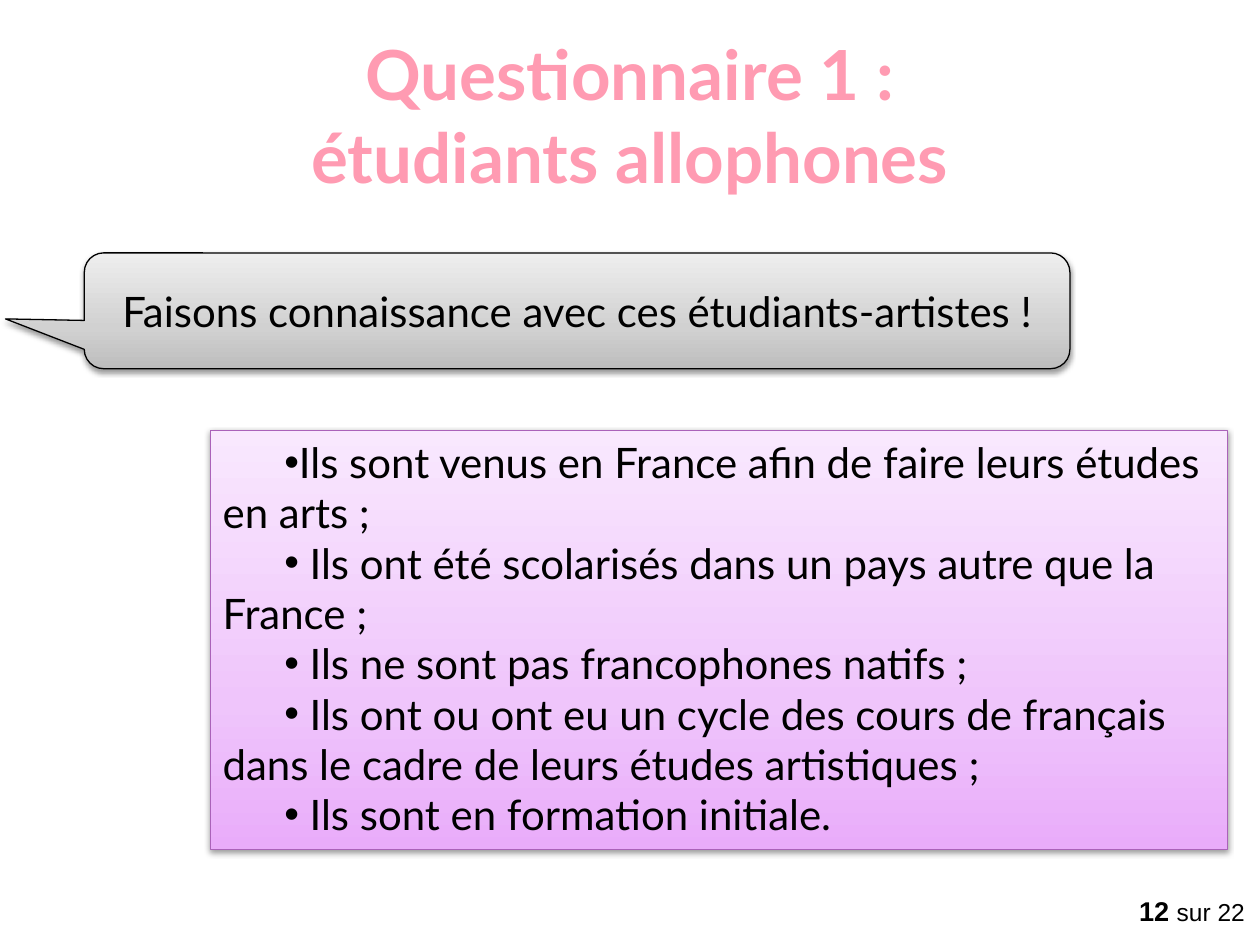
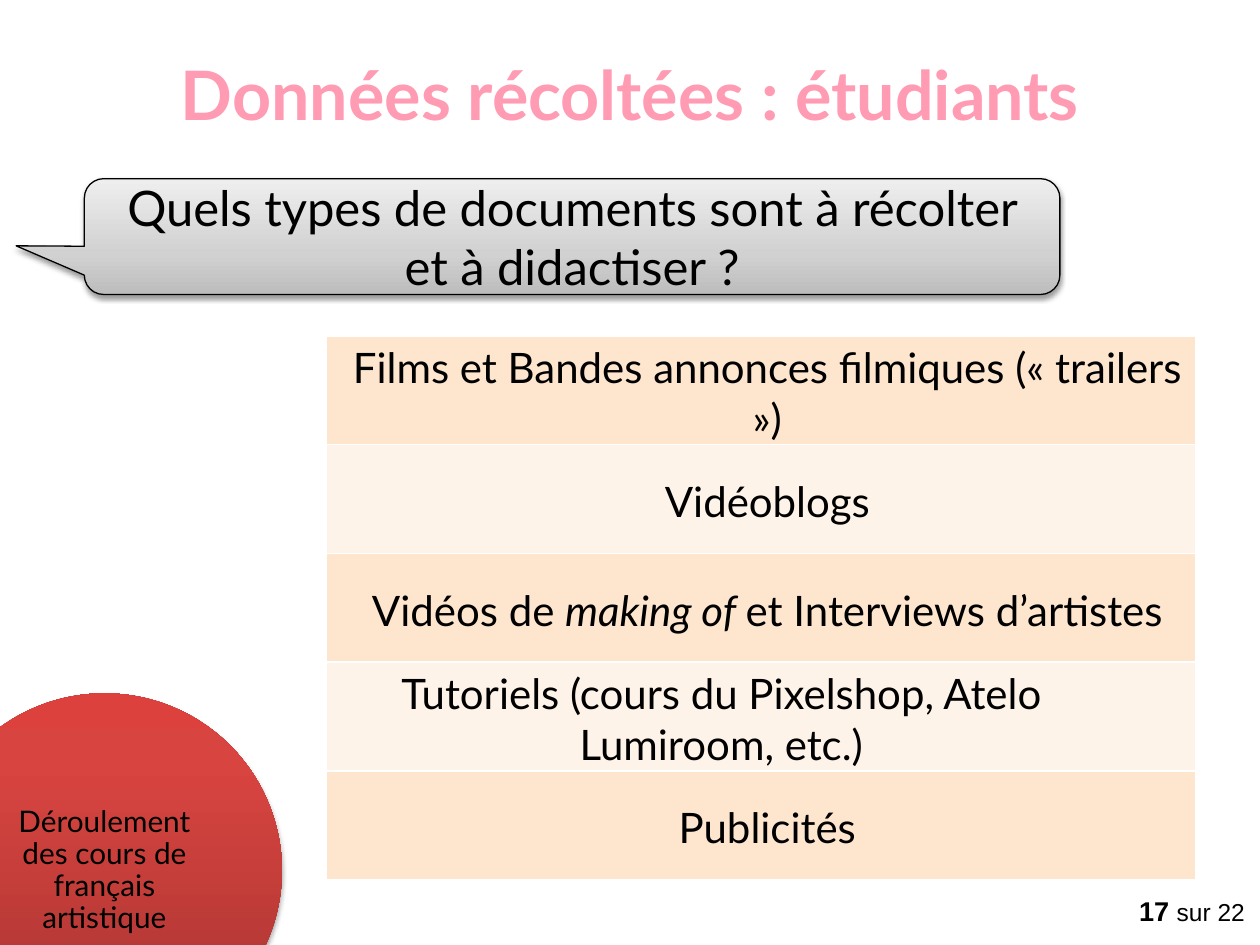
"""Build two slides about the student questionnaire."""
from copy import deepcopy
from dataclasses import dataclass

from lxml import etree
from pptx import Presentation
from pptx.dml.color import RGBColor
from pptx.enum.shapes import MSO_SHAPE
from pptx.enum.text import MSO_ANCHOR, MSO_AUTO_SIZE, PP_ALIGN
from pptx.oxml.ns import qn
from pptx.util import Inches, Pt

CENTER, LEFT = PP_ALIGN.CENTER, PP_ALIGN.LEFT
TOP, MIDDLE = MSO_ANCHOR.TOP, MSO_ANCHOR.MIDDLE
NO_AUTOFIT = MSO_AUTO_SIZE.NONE
RECTANGLE, OVAL = MSO_SHAPE.RECTANGLE, MSO_SHAPE.OVAL
CALLOUT = MSO_SHAPE.ROUNDED_RECTANGULAR_CALLOUT
TITLE_ONLY = 5


@dataclass(frozen=True)
class Theme:
    """Colours, fonts and type sizes shared by the slides."""
    font: str = "Lato"
    footer_font: str = "Arial"
    text: str = "000000"
    title: str = "FF9BB2"
    border: str = "FFFFFF"
    panel_line: str = "AA62B9"
    panel: tuple = ((0, "E9ACFA"), (0.35, "EFC5FB"), (1, "F9E8FE"))
    callout: tuple = ((0, "BDBDBD"), (0.35, "D1D1D1"), (1, "EEEEEE"))
    circle: tuple = ((0, "A73431"), (0.8, "D84440"), (1, "DC413D"))
    bands: tuple = ("FDE5CE", "FEF3E8")
    body_size: float = 24
    question_size: float = 28
    circle_size: float = 17
    number_size: float = 15.5
    total_size: float = 14


THEME = Theme()
SLIDE_WIDTH, SLIDE_HEIGHT = 10.01, 7.51
CALLOUT_LEFT, CALLOUT_HEIGHT = 0.67, 0.92
TOTAL = "22"

STUDENTS = {
    "title": ["Questionnaire 1 :", "étudiants allophones"],
    "title_area": (0, 0.24, SLIDE_WIDTH, 1.31),
    "title_size": 39.5,
    "callout": "Faisons connaissance avec ces étudiants-artistes !",
    "callout_top": 2.01,
    "callout_width": 7.83,
    "callout_tail": (-0.58, 0.07),
    "callout_size": THEME.body_size,
    "number": "12",
}
PROFILE = [
    "Ils sont venus en France afin de faire leurs études en arts ;",
    " Ils ont été scolarisés dans un pays autre que la France ;",
    " Ils ne sont pas francophones natifs ;",
    " Ils ont ou ont eu un cycle des cours de français dans le cadre de leurs études artistiques ;",
    " Ils sont en formation initiale.",
]
DOCUMENTS = {
    "title": ["Données récoltées : étudiants"],
    "title_area": (0, 0.41, SLIDE_WIDTH, 0.67),
    "title_size": 39,
    "callout": "Quels types de documents sont à récolter et à didactiser ?",
    "callout_top": 1.42,
    "callout_width": 7.75,
    "callout_tail": (-0.57, 0.08),
    "callout_size": THEME.question_size,
    "number": "17",
}
DOCUMENT_ROWS = [
    {"spans": [("Films et Bandes annonces filmiques (« trailers »)", False)]},
    {"spans": [("Vidéoblogs", False)]},
    {"spans": [("Vidéos de ", False), ("making of ", True),
               ("et Interviews d’artistes", False)]},
    {"spans": [("Tutoriels (cours du Pixelshop, Atelo Lumiroom, etc.)", False)],
     "right": 0.73},
    {"spans": [("Publicités", False)]},
]
COURSE = "Déroulement des cours de français artistique"


def color(value):
    """Return a colour from its hexadecimal form."""
    return RGBColor.from_string(value)


def inches(*values):
    """Convert several lengths to inches."""
    return [Inches(value) for value in values]


def add_span(para, text, size, bold=False, italic=False,
             font=THEME.font, tint=THEME.text):
    """Add one formatted run to a paragraph."""
    span = para.add_run()
    span.text = text
    span.font.name, span.font.size = font, Pt(size)
    span.font.bold, span.font.italic = bold, italic
    span.font.color.rgb = color(tint)


def set_frame(frame, anchor, margins=(0.1, 0.05, 0.1, 0.05)):
    """Set wrapping, anchor and margins of a text frame."""
    frame.auto_size = NO_AUTOFIT
    frame.word_wrap = True
    frame.vertical_anchor = anchor
    (frame.margin_left, frame.margin_top,
     frame.margin_right, frame.margin_bottom) = inches(*margins)


def add_shadow(shape, opacity, distance):
    """Give a shape a soft shadow falling downwards."""
    shape.shadow.inherit = False
    effects = shape._element.spPr.find(qn("a:effectLst"))
    shadow = etree.SubElement(
        effects, qn("a:outerShdw"), blurRad=str(Pt(3.1)), dist=str(Pt(distance)),
        dir="5400000", rotWithShape="0")
    tint = etree.SubElement(shadow, qn("a:srgbClr"), val="000000")
    etree.SubElement(tint, qn("a:alpha"), val=str(opacity * 1000))


def add_gradient_shape(page, kind, area, stops, line=None, opacity=38, distance=1.6):
    """Add a preset shape with a vertical gradient and a shadow."""
    shape = page.shapes.add_shape(kind, *inches(*area))
    shape.fill.gradient()
    stop_list = shape._element.spPr.find(qn("a:gradFill")).find(qn("a:gsLst"))
    stop_list.append(deepcopy(stop_list[-1]))
    for stop, (position, tint) in zip(shape.fill.gradient_stops, stops):
        stop.position = position
        stop.color.rgb = color(tint)
    shape.fill.gradient_angle = 90
    if line:
        shape.line.color.rgb = color(line)
        shape.line.width = Pt(0.75)
    else:
        shape.line.fill.background()
    add_shadow(shape, opacity, distance)
    return shape


def add_title(page, content):
    """Place and fill the title placeholder."""
    title = page.shapes.title
    title.left, title.top, title.width, title.height = inches(*content["title_area"])
    set_frame(title.text_frame, TOP, (0, 0.01, 0, 0))
    para = title.text_frame.paragraphs[0]
    para.alignment = CENTER
    for index, line in enumerate(content["title"]):
        if index:
            para.add_line_break()
        add_span(para, line, content["title_size"], bold=True, tint=THEME.title)


def add_callout(page, content):
    """Add the speech bubble under the title."""
    area = (CALLOUT_LEFT, content["callout_top"], content["callout_width"], CALLOUT_HEIGHT)
    bubble = add_gradient_shape(page, CALLOUT, area, THEME.callout, THEME.text)
    for index, value in enumerate(content["callout_tail"]):
        bubble.adjustments[index] = value
    set_frame(bubble.text_frame, MIDDLE)
    para = bubble.text_frame.paragraphs[0]
    para.alignment = CENTER
    add_span(para, content["callout"], content["callout_size"])


def add_footer(page, number):
    """Add the page count at the bottom right."""
    box = page.shapes.add_textbox(*inches(9.01, 7.11, 0.96, 0.26))
    set_frame(box.text_frame, TOP, (0.04, 0, 0, 0))
    para = box.text_frame.paragraphs[0]
    add_span(para, number + " ", THEME.number_size, bold=True, font=THEME.footer_font)
    add_span(para, "sur " + TOTAL, THEME.total_size, font=THEME.footer_font)


def add_page(deck, content):
    """Add a slide with its title, bubble and footer."""
    page = deck.slides.add_slide(deck.slide_layouts[TITLE_ONLY])
    add_title(page, content)
    add_callout(page, content)
    add_footer(page, content["number"])
    return page


def add_profile(page):
    """Add the panel with the bulleted profile."""
    panel = add_gradient_shape(page, RECTANGLE, (1.67, 3.42, 8.08, 3.33),
                               THEME.panel, THEME.panel_line)
    frame = panel.text_frame
    set_frame(frame, TOP)
    for index, text in enumerate(PROFILE):
        para = frame.add_paragraph() if index else frame.paragraphs[0]
        para.alignment = LEFT
        properties = para._p.get_or_add_pPr()
        properties.set("marL", "0")
        properties.set("indent", str(Inches(0.49)))
        etree.SubElement(properties, qn("a:buFont"), typeface=THEME.footer_font)
        etree.SubElement(properties, qn("a:buChar"), char="•")
        add_span(para, text, THEME.body_size)


def set_borders(cell):
    """Draw the four borders of a table cell."""
    properties = cell._tc.get_or_add_tcPr()
    for side in ("a:lnL", "a:lnR", "a:lnT", "a:lnB"):
        line = etree.SubElement(properties, qn(side), w=str(Pt(1)))
        fill = etree.SubElement(line, qn("a:solidFill"))
        etree.SubElement(fill, qn("a:srgbClr"), val=THEME.border)


def add_documents(page):
    """Add the table of document types."""
    frame = page.shapes.add_table(len(DOCUMENT_ROWS), 1, *inches(2.59, 2.67, 6.91, 4.32))
    table = frame.table
    table.first_row = table.horz_banding = False
    for index, row in enumerate(DOCUMENT_ROWS):
        cell = table.cell(index, 0)
        set_borders(cell)
        cell.fill.solid()
        cell.fill.fore_color.rgb = color(THEME.bands[index % len(THEME.bands)])
        cell.vertical_anchor = MIDDLE
        (cell.margin_left, cell.margin_top, cell.margin_right,
         cell.margin_bottom) = inches(0.1, 0.04, row.get("right", 0), 0)
        para = cell.text_frame.paragraphs[0]
        para.alignment = CENTER
        for text, italic in row["spans"]:
            add_span(para, text, THEME.body_size, italic=italic)


def add_course_circle(page):
    """Add the circle that names the topic in the corner."""
    circle = add_gradient_shape(page, OVAL, (-0.58, 5.51, 2.82, 2.82),
                                THEME.circle, opacity=35, distance=1.8)
    set_frame(circle.text_frame, MIDDLE, (0.16, 0.02, 0.16, 0.02))
    para = circle.text_frame.paragraphs[0]
    para.alignment = CENTER
    para.line_spacing = 0.9
    add_span(para, COURSE, THEME.circle_size)


def main():
    """Build and save the deck."""
    deck = Presentation()
    deck.slide_width, deck.slide_height = inches(SLIDE_WIDTH, SLIDE_HEIGHT)
    add_profile(add_page(deck, STUDENTS))
    page = add_page(deck, DOCUMENTS)
    add_documents(page)
    add_course_circle(page)
    deck.save("out.pptx")


if __name__ == "__main__":
    main()
